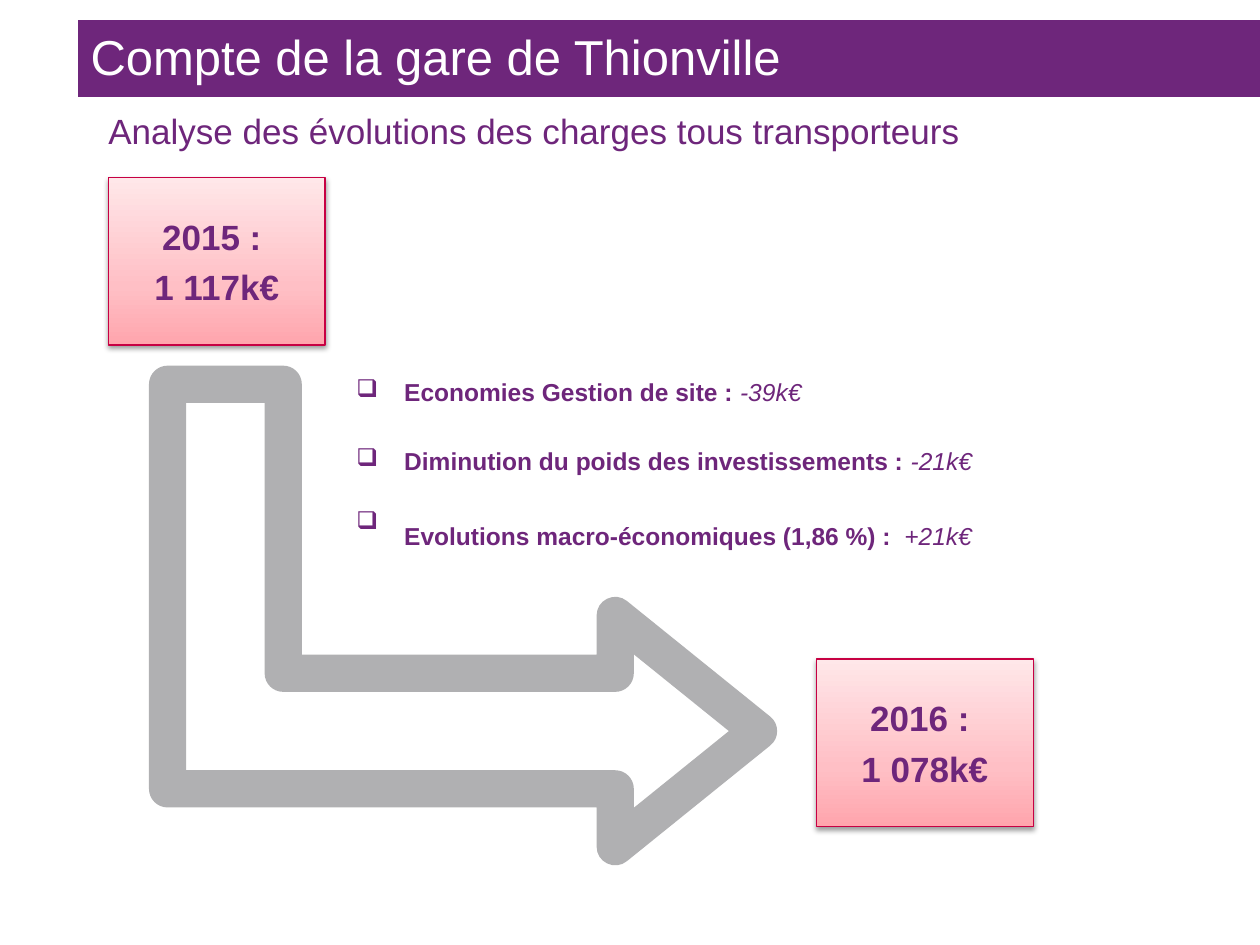
from lxml.etree import SubElement as sub
from pptx import Presentation
from pptx.dml.color import RGBColor
from pptx.enum.shapes import MSO_SHAPE as SHAPE
from pptx.enum.text import MSO_ANCHOR as ANCHOR, PP_ALIGN as ALIGN
from pptx.oxml.ns import qn
from pptx.util import Inches, Pt

COLORS = {"purple": "6E267B", "white": "FFFFFF", "grey": "B0B0B2", "red": "C70043",
          "pink_low": "FFA5AD", "pink_mid": "FFBFC5", "pink_top": "FFE7E9", "black": "000000"}
CELL = 0.1
LEFT = 8.6
BOX_SIZE = (17.2, 13.3)
INDENT = 0.38


def rgb(name):
    """Return the named colour."""
    return RGBColor.from_string(COLORS[name])


def grid(*cells):
    """Turn columns and rows of the slide grid into lengths."""
    return [Inches(round(c * CELL, 3)) for c in cells]


def style(r, size, color="purple", bold=False, italic=False, font="Arial"):
    """Format one run."""
    r.font.name, r.font.size = font, Pt(size)
    r.font.bold, r.font.italic = bold, italic
    r.font.color.rgb = rgb(color)


def add_run(p, text, size, **kw):
    """Append a formatted run to a paragraph."""
    r = p.add_run()
    r.text = text
    style(r, size, **kw)


def add_rect(slide, *cells):
    """Add a plain rectangle."""
    s = slide.shapes.add_shape(SHAPE.RECTANGLE, *grid(*cells))
    s.shadow.inherit = False
    return s


def add_title_bar(slide, text):
    """Add the coloured title band."""
    s = add_rect(slide, 6.2, 1.6, 93.8, 6.1)
    s.fill.solid()
    s.fill.fore_color.rgb = rgb("purple")
    s.line.fill.background()
    s.text_frame.text = text
    s.text_frame.vertical_anchor = ANCHOR.TOP
    p = s.text_frame.paragraphs[0]
    p.alignment = ALIGN.LEFT
    style(p.runs[0], 28, "white")


def add_subtitle(slide, text):
    """Add the line under the title."""
    tf = slide.shapes.add_textbox(*grid(LEFT, 8.7, 86.7, 3.4)).text_frame
    tf.word_wrap = True
    tf.margin_left = tf.margin_right = tf.margin_top = tf.margin_bottom = 0
    tf.text = text
    style(tf.paragraphs[0].runs[0], 20)


def set_gradient(s, stops):
    """Fill a shape with a vertical gradient that starts at the bottom."""
    s.fill.gradient()
    s.fill.gradient_angle = 90
    gs_lst = s._element.spPr.find(qn("a:gradFill")).find(qn("a:gsLst"))
    for gs in list(gs_lst):
        gs_lst.remove(gs)
    for pos, name in stops:
        gs = sub(gs_lst, qn("a:gs"), pos=str(pos * 1000))
        sub(gs, qn("a:srgbClr"), val=COLORS[name])


def set_shadow(s):
    """Give a shape a soft shadow below it."""
    effects = s._element.spPr.find(qn("a:effectLst"))
    shadow = sub(effects, qn("a:outerShdw"), blurRad=str(Pt(3.1)), dist=str(Pt(1.6)),
                 dir="5400000", rotWithShape="0")
    color = sub(shadow, qn("a:srgbClr"), val=COLORS["black"])
    sub(color, qn("a:alpha"), val="38000")


def add_year_box(slide, left, top, year, amount):
    """Add a box with a year and its total."""
    s = add_rect(slide, left, top, *BOX_SIZE)
    set_gradient(s, [(0, "pink_low"), (35, "pink_mid"), (100, "pink_top")])
    s.line.color.rgb, s.line.width = rgb("red"), Pt(0.75)
    set_shadow(s)
    tf = s.text_frame
    tf.text = f"{year} : \n{amount}"
    tf.vertical_anchor = ANCHOR.MIDDLE
    for p in tf.paragraphs:
        p.alignment = ALIGN.CENTER
        style(p.runs[0], 20, bold=True)
    tf.paragraphs[1].space_before = Pt(5)


def add_bent_arrow(slide):
    """Add the outlined arrow that leads from one year to the next."""
    s = slide.shapes.add_shape(SHAPE.BENT_UP_ARROW, *grid(18.4, 25.4, 36.7, 46.9))
    s.rotation = 90
    for i, share in enumerate((0.25, 0.25, 0.31)):
        s.adjustments[i] = share
    s.shadow.inherit = False
    s.fill.background()
    s.line.color.rgb, s.line.width = rgb("grey"), Pt(21.25)
    sub(s._element.spPr.find(qn("a:ln")), qn("a:round"))


def add_bullet(p):
    """Give a paragraph a hanging box bullet."""
    pPr = p._p.get_or_add_pPr()
    pPr.set("marL", str(Inches(INDENT)))
    pPr.set("indent", str(-Inches(INDENT)))
    sub(pPr, qn("a:buChar"), char="❑")


def add_changes(slide, changes):
    """Add the bulleted list of changes and their amounts."""
    tf = slide.shapes.add_textbox(*grid(27.3, 22.7, 68, 35.9)).text_frame
    tf.word_wrap = True
    tf.margin_top = Inches(0.72)
    for i, (label, gap_size, gap_font, amount, before) in enumerate(changes):
        p = tf.add_paragraph() if i else tf.paragraphs[0]
        if before:
            p.space_before = Pt(before)
        add_bullet(p)
        add_run(p, label, 14, bold=True)
        add_run(p, " ", gap_size, bold=True, font=gap_font)
        add_run(p, amount, 14, italic=True)


def main():
    """Build the slide and save it."""
    prs = Presentation()
    prs.slide_width, prs.slide_height = grid(100, 75)
    slide = prs.slides.add_slide(prs.slide_layouts[6])
    add_year_box(slide, LEFT, 14.1, 2015, "1 117k€")
    add_year_box(slide, 64.8, 52.3, 2016, "1 078k€")
    add_bent_arrow(slide)
    add_changes(slide, [
        ("Economies Gestion de site :", 14, "Arial", "-39k€", 0),
        ("Diminution du poids des investissements :", 14, "Arial", "-21k€", 23),
        ("Evolutions macro-économiques (1,86 %) :", 32, "Arial Narrow", "+21k€", 8),
    ])
    add_title_bar(slide, "Compte de la gare de Thionville")
    add_subtitle(slide, "Analyse des évolutions des charges tous transporteurs")
    prs.save("out.pptx")


if __name__ == "__main__":
    main()
